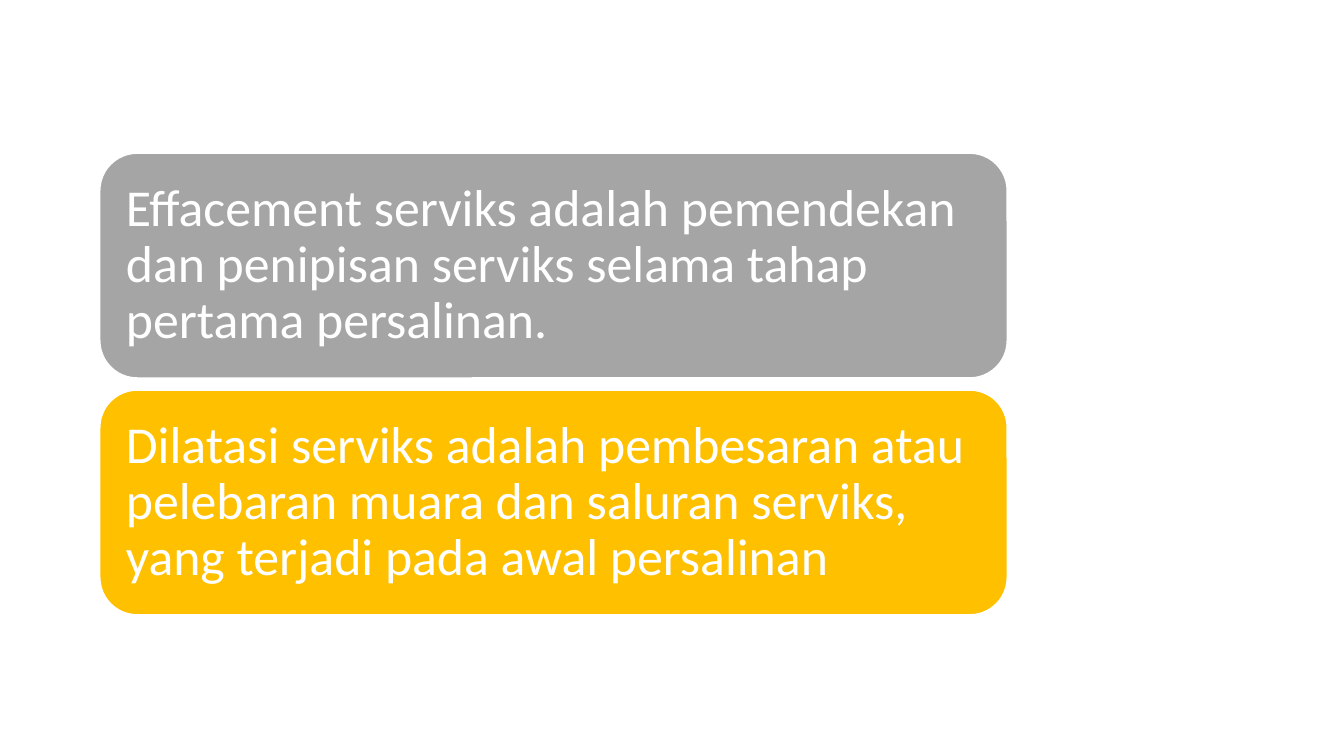
from pptx import Presentation
from pptx.dml.color import RGBColor
from pptx.enum import shapes, text
from pptx.util import Inches, Pt

HUES = {"gray": "A5A5A5", "gold": "FFC000", "white": "FFFFFF"}
CARDS = [
    ("gray", "Effacement serviks adalah pemendekan dan penipisan serviks "
             "selama tahap pertama persalinan."),
    ("gold", "Dilatasi serviks adalah pembesaran atau pelebaran muara dan "
             "saluran serviks, yang terjadi pada awal persalinan"),
]


def hue(name):
    return RGBColor.from_string(HUES[name])


def add_card(slide, left, top, width, height, fill, words):
    """Draw one rounded card with its definition."""
    card = slide.shapes.add_shape(
        shapes.MSO_SHAPE.ROUNDED_RECTANGLE,
        Inches(left), Inches(top), Inches(width), Inches(height))
    card.shadow.inherit = False
    card.fill.solid()
    card.fill.fore_color.rgb = hue(fill)
    card.line.color.rgb = hue("white")
    card.line.width = Pt(1)

    # Definition text
    frame = card.text_frame
    frame.word_wrap = True
    frame.vertical_anchor = text.MSO_ANCHOR.MIDDLE
    # The corner curve already insets the text by about 0.11 inch
    frame.margin_left = frame.margin_right = Inches(0.15)
    frame.margin_top = frame.margin_bottom = Inches(0.15)
    para = frame.paragraphs[0]
    para.alignment = text.PP_ALIGN.LEFT
    para.line_spacing = 0.9
    run = para.add_run()
    run.text = words
    run.font.name = "Calibri"
    run.font.size = Pt(37)
    run.font.color.rgb = hue("white")


def add_stack(slide, left, top, width, height, gap):
    """Share the box evenly among the cards, top to bottom."""
    tall = (height - gap * (len(CARDS) - 1)) / len(CARDS)
    for row, (fill, words) in enumerate(CARDS):
        add_card(slide, left, top + row * (tall + gap), width, tall,
                 fill, words)


def main():
    deck = Presentation()
    deck.slide_width, deck.slide_height = Inches(13.33), Inches(7.5)
    slide = deck.slides.add_slide(deck.slide_layouts[6])
    add_stack(slide, 0.99, 1.52, 9, 4.58, 0.12)
    deck.save("out.pptx")


if __name__ == "__main__":
    main()
